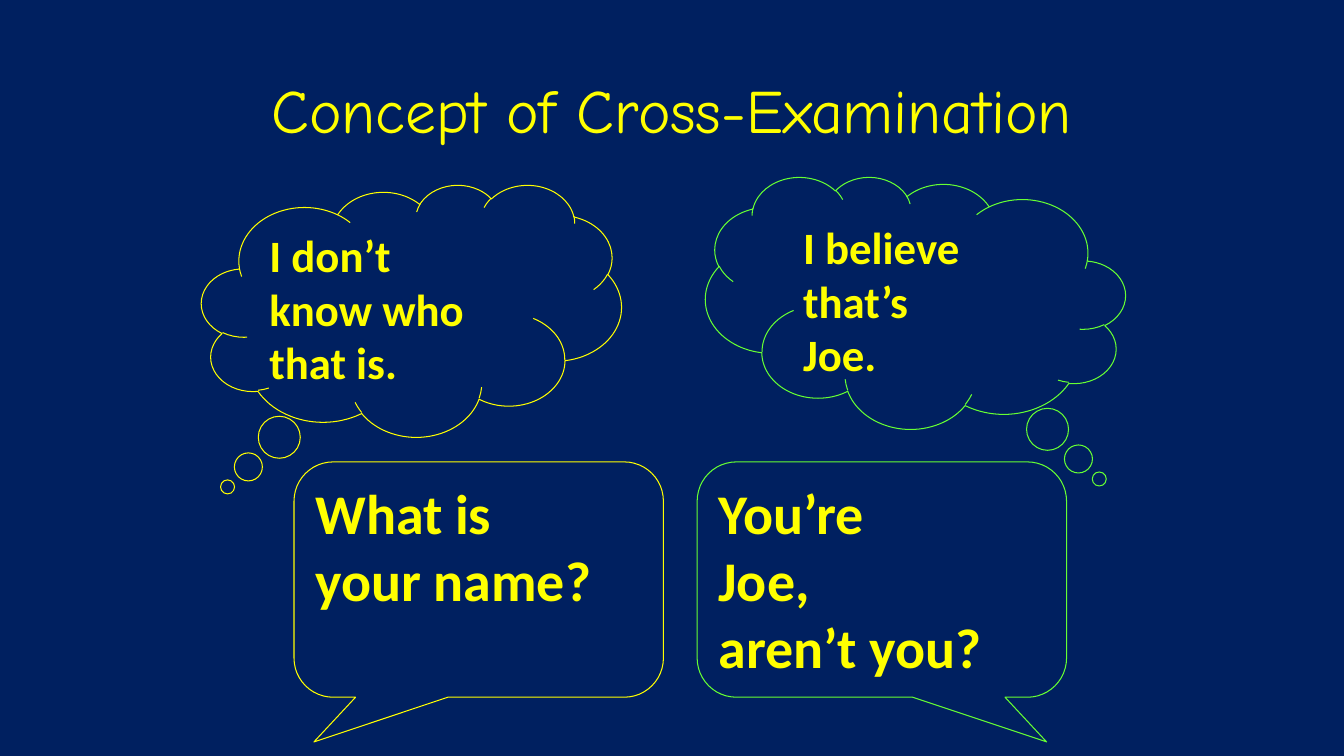
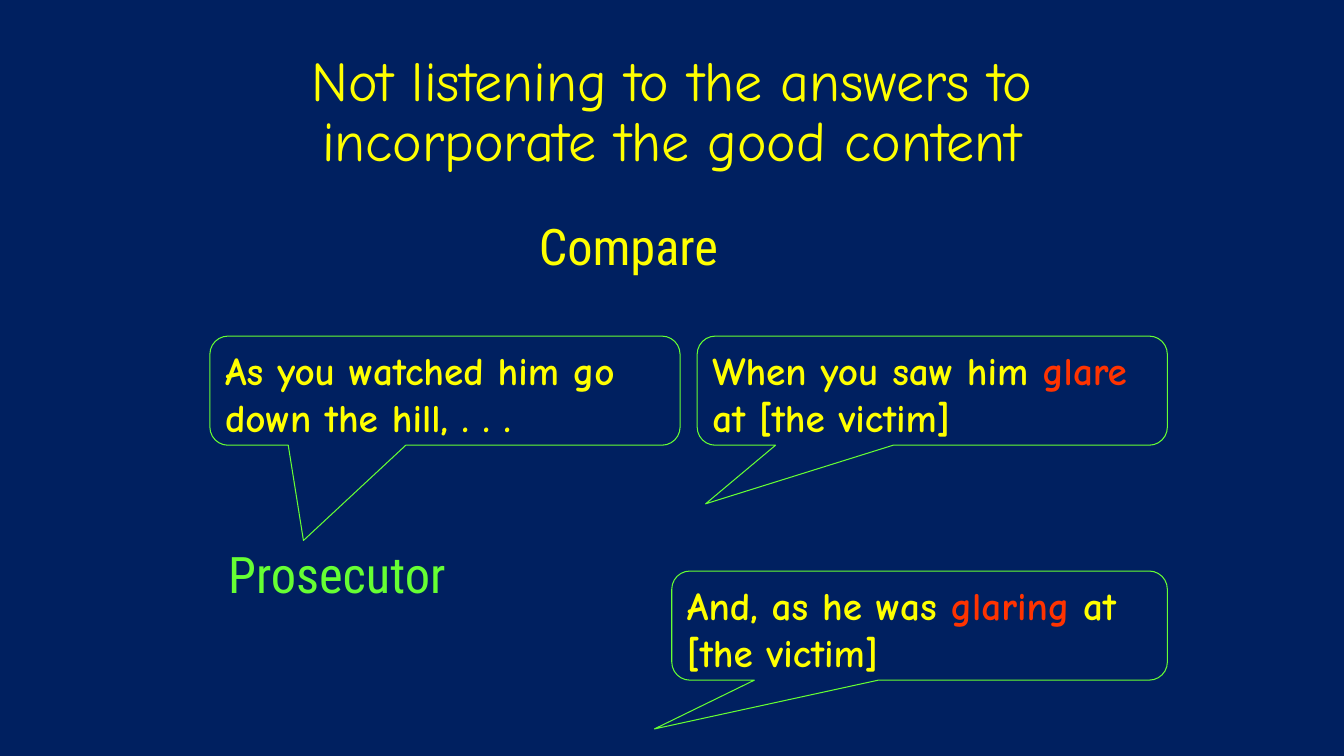
from pptx import Presentation
from pptx.dml.color import RGBColor as Rgb
from pptx.enum.shapes import MSO_SHAPE as Geo
from pptx.enum.text import MSO_ANCHOR as Anchor, PP_ALIGN as Align
from pptx.util import Cm, Pt

HUES = {"navy": "002060", "yellow": "FFFF00", "green": "66FF33", "red": "FF3300"}
HAND, SANS, COND = "Comic Neue", "Calibri", "Roboto Condensed"
TITLE_BOX = (2.33, 1.02, 29.21, 3.68)
CLOUD, SPEECH = Geo.CLOUD_CALLOUT, Geo.ROUNDED_RECTANGULAR_CALLOUT

# A paragraph is a list of (text, hue) runs or a plain string.
# Bubble: shape, box in cm, tail (x, y), line hue, mirrored, paragraphs
THINK = {"font": SANS, "size": 32, "bold": True}
SPEAK = {"font": SANS, "size": 40, "bold": True}
QUOTE = {"font": HAND, "size": 28, "bold": True}
LABEL = {"font": COND, "size": 36}
CLOUD_TAIL, SPEECH_TAIL = (-0.438, 0.7), (-0.446, 0.69)

SLIDES = [
    {
        "title": "Concept of Cross-Examination", "size": 44,
        "bubbles": [
            (CLOUD, (5.08, 4.65, 10.58, 6.35), CLOUD_TAIL, "yellow", False,
             ["I don’t", "know who that is."], THINK),
            (SPEECH, (7.41, 11.64, 9.31, 5.93), SPEECH_TAIL, "yellow", False,
             ["What is", "your name?"], SPEAK),
            (CLOUD, (17.78, 4.45, 10.58, 6.35), CLOUD_TAIL, "green", True,
             ["I believe", "that’s", "Joe."], THINK),
            (SPEECH, (17.57, 11.64, 9.31, 5.93), SPEECH_TAIL, "green", True,
             ["You’re", "Joe,", "aren’t you?"], SPEAK),
        ],
        "labels": [],
    },
    {
        "title": "Not listening to the answers to\nincorporate the good content", "size": 40,
        "bubbles": [
            (SPEECH, (5.29, 8.47, 11.85, 2.75), (-0.301, 1.373), "green", False,
             ["As you watched him go down the hill, . . ."], QUOTE),
            (SPEECH, (17.57, 8.47, 11.85, 2.75), (-0.482, 1.037), "green", False,
             [[("When you saw him ", "yellow"), ("glare", "red"),
               (" at [the victim]", "yellow")]], QUOTE),
            (SPEECH, (16.93, 14.39, 12.49, 2.75), (-0.535, 0.947), "green", False,
             [[("And, as he was ", "yellow"), ("glaring", "red"),
               (" at [the victim]", "yellow")]], QUOTE),
        ],
        "labels": [
            ("Compare", (13.33, 5.29, 7.83, 2.96), "yellow"),
            ("Prosecutor", (5.5, 13.55, 7.83, 2.96), "green"),
        ],
    },
]


def color(name):
    return Rgb.from_string(HUES[name])


def write(shape, paras, font, size, hue="yellow", bold=False,
          align=Align.LEFT, anchor=Anchor.TOP, spacing=None):
    frame = shape.text_frame
    frame.word_wrap = True
    frame.vertical_anchor = anchor
    for i, runs in enumerate(paras):
        para = frame.add_paragraph() if i else frame.paragraphs[0]
        para.alignment = align
        if spacing:
            para.line_spacing = spacing
        for text, tint in [(runs, hue)] if isinstance(runs, str) else runs:
            for j, line in enumerate(text.split("\n")):
                if j:
                    para.add_line_break()
                run = para.add_run()
                run.text = line
                run.font.name, run.font.size, run.font.bold = font, Pt(size), bold
                run.font.color.rgb = color(tint)


def add_text(slide, text, box, **style):
    write(slide.shapes.add_textbox(*map(Cm, box)), [text], **style)


def add_bubble(slide, kind, box, tail, hue, mirror, paras, style):
    shape = slide.shapes.add_shape(kind, *map(Cm, box))
    shape.shadow.inherit = False
    shape.adjustments[0], shape.adjustments[1] = tail
    shape.fill.solid()
    shape.fill.fore_color.rgb = color("navy")
    shape.line.color.rgb = color(hue)
    shape.line.width = Pt(0.75)
    if mirror:
        shape._element.spPr.xfrm.set("flipH", "1")
    write(shape, paras, **style)


def main():
    deck = Presentation()
    deck.slide_width, deck.slide_height = Cm(33.87), Cm(19.05)
    for page in SLIDES:
        slide = deck.slides.add_slide(deck.slide_layouts[6])
        slide.background.fill.solid()
        slide.background.fill.fore_color.rgb = color("navy")
        add_text(slide, page["title"], TITLE_BOX, font=HAND, size=page["size"],
                 align=Align.CENTER, anchor=Anchor.MIDDLE, spacing=0.9)
        for bubble in page["bubbles"]:
            add_bubble(slide, *bubble)
        for text, box, hue in page["labels"]:
            add_text(slide, text, box, hue=hue, **LABEL)
    deck.save("out.pptx")


if __name__ == "__main__":
    main()
